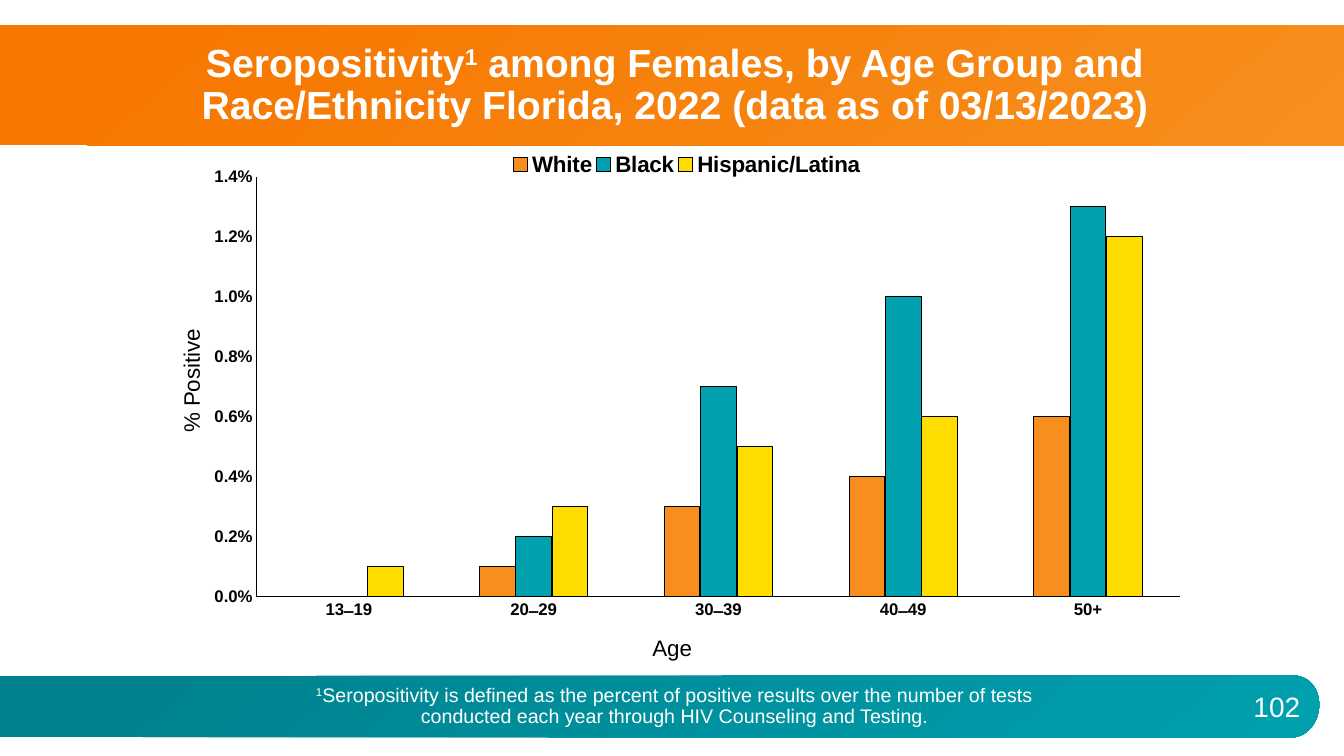
from dataclasses import dataclass

from pptx import Presentation
from pptx.chart.data import CategoryChartData
from pptx.dml.color import RGBColor
from pptx.enum.chart import XL_CHART_TYPE, XL_LEGEND_POSITION, XL_TICK_MARK
from pptx.enum.shapes import MSO_SHAPE
from pptx.enum.text import MSO_ANCHOR, MSO_AUTO_SIZE, PP_ALIGN
from pptx.oxml import parse_xml
from pptx.oxml.ns import nsdecls, qn
from pptx.util import Cm, Pt


@dataclass(frozen=True)
class Theme:
    font: str = "Arial"
    white: str = "FFFFFF"
    black: str = "000000"
    orange: tuple = ("F77600", "F78F1C")
    teal: tuple = ("00828E", "00A0AF")
    series: tuple = ("F78E1E", "00A0AF", "FFDD00")
    title: int = 28
    number: int = 20
    label: int = 16
    note: int = 14
    tick: int = 12


theme = Theme()


def style_font(font, size, color, bold=False):
    for name, value in {"name": theme.font, "size": Pt(size), "bold": bold}.items():
        setattr(font, name, value)
    font.color.rgb = RGBColor.from_string(color)


def place_in_chart(element, index, **fractions):
    for layout in element.findall(qn("c:layout")):
        element.remove(layout)
    target = '<c:layoutTarget val="inner"/>' if index == 0 else ""
    modes = "".join(f'<c:{key}Mode val="edge"/>' for key in "xy")
    values = "".join(f'<c:{key} val="{value}"/>' for key, value in fractions.items())
    element.insert(index, parse_xml(
        f'<c:layout {nsdecls("c")}><c:manualLayout>{target}{modes}{values}'
        "</c:manualLayout></c:layout>"))


presentation = Presentation()
presentation.slide_width = Cm(33.87)
presentation.slide_height = Cm(19.05)
slide = presentation.slides.add_slide(presentation.slide_layouts[5])

curve = [(32.51, 17.02), (33.53, 16.97), (33.45, 18.57), (32.51, 18.59)]
steps = 32
footer_points = []
for step in range(steps + 1):
    t = step / steps
    weights = [(1 - t) ** 3, 3 * t * (1 - t) ** 2, 3 * t ** 2 * (1 - t), t ** 3]
    x, y = (sum(w * point[axis] for w, point in zip(weights, curve)) for axis in (0, 1))
    footer_points.append((Cm(x), Cm(y)))
footer_points += [(Cm(0), Cm(18.57)), (Cm(0), Cm(17.04))]
builder = slide.shapes.build_freeform(*footer_points[0])
builder.add_line_segments(footer_points[1:], close=True)
footer_band = builder.convert_to_shape()
title_band = slide.shapes.add_shape(MSO_SHAPE.RECTANGLE, 0, Cm(0.64), Cm(33.87), Cm(3.02))

for band, colors in ((footer_band, theme.teal), (title_band, theme.orange)):
    band.shadow.inherit = False
    band.line.fill.background()
    band.fill.gradient()
    band.fill.gradient_angle = 310
    for stop, color, position in zip(band.fill.gradient_stops, colors, (0.09, 1)):
        stop.color.rgb = RGBColor.from_string(color)
        stop.position = position

title = slide.shapes.title
title.element.getparent().append(title.element)
for name, value in {"left": Cm(1.88), "top": Cm(0.66),
                    "width": Cm(30.25), "height": Cm(3)}.items():
    setattr(title, name, value)

chart_data = CategoryChartData(number_format="0.0%")
chart_data.categories = ["13 ̶ 19", "20 ̶ 29", "30 ̶ 39", "40 ̶ 49", "50+"]
chart_data.add_series("White", (0, 0.001, 0.003, 0.004, 0.006))
chart_data.add_series("Black", (0, 0.002, 0.007, 0.01, 0.013))
chart_data.add_series("Hispanic/Latina", (0.001, 0.003, 0.005, 0.006, 0.012))
chart = slide.shapes.add_chart(XL_CHART_TYPE.COLUMN_CLUSTERED, Cm(4.11), Cm(1.75),
                               Cm(25.65), Cm(14.12), chart_data).chart
chart.has_title = False
style_font(chart.font, 10, theme.black)
chart.element.find(qn("c:chart")).addnext(parse_xml(
    f'<c:spPr {nsdecls("c", "a")}><a:noFill/><a:ln><a:noFill/></a:ln></c:spPr>'))

plot = chart.plots[0]
for name, value in {"gap_width": 215, "overlap": -2, "vary_by_categories": False}.items():
    setattr(plot, name, value)
for series, color in zip(plot.series, theme.series):
    series.invert_if_negative = False
    series.format.fill.solid()
    series.format.fill.fore_color.rgb = RGBColor.from_string(color)

for axis in (chart.category_axis, chart.value_axis):
    for name, value in {"has_major_gridlines": False, "major_tick_mark": XL_TICK_MARK.NONE,
                        "minor_tick_mark": XL_TICK_MARK.NONE}.items():
        setattr(axis, name, value)
    style_font(axis.tick_labels.font, theme.tick, theme.black, True)
for outlined in (*plot.series, chart.category_axis, chart.value_axis):
    outlined.format.line.color.rgb = RGBColor.from_string(theme.black)
    outlined.format.line.width = Pt(0.75)

value_axis = chart.value_axis
for name, value in {"minimum_scale": 0, "maximum_scale": 0.014, "major_unit": 0.002}.items():
    setattr(value_axis, name, value)
value_axis.tick_labels.number_format = "0.0%"
value_axis.tick_labels.number_format_is_linked = False
axis_title = value_axis.axis_title.text_frame
axis_title.text = "% Positive"
style_font(axis_title.paragraphs[0].runs[0].font, theme.label, theme.black)

chart.has_legend = True
chart.legend.position = XL_LEGEND_POSITION.BOTTOM
chart.legend.include_in_layout = False
style_font(chart.legend.font, theme.label, theme.black, True)

place_in_chart(chart.element.xpath(".//c:plotArea")[0], 0, x=0.092, y=0.192, w=0.908, h=0.749)
place_in_chart(chart.element.xpath(".//c:legend")[0], 1, x=0.34, y=0.14, w=0.35, h=0.06)
place_in_chart(chart.element.xpath(".//c:valAx/c:title")[0], 1, x=0.01, y=0.457)

age_label = slide.shapes.add_textbox(Cm(14.91), Cm(15.85), Cm(4.06), Cm(0.94))
footnote = slide.shapes.add_textbox(Cm(1.88), Cm(17.15), Cm(30.25), Cm(1.32))
slide_number = slide.shapes.add_textbox(Cm(30.86), Cm(17.2), Cm(2.16), Cm(1.22))

texts = [
    (title, [["Seropositivity", "1", " among Females, by Age Group and Race/Ethnicity "
              "Florida, 2022 (data as of 03/13/2023)"]],
     theme.title, theme.white, True, PP_ALIGN.CENTER, MSO_ANCHOR.MIDDLE, 0.9),
    (age_label, [["Age"]],
     theme.label, theme.black, False, PP_ALIGN.CENTER, MSO_ANCHOR.TOP, 1),
    (footnote, [["1", "Seropositivity is defined as the percent of positive results "
                 "over the number of tests"],
                ["conducted each year through HIV Counseling and Testing."]],
     theme.note, theme.white, False, PP_ALIGN.CENTER, MSO_ANCHOR.TOP, 0.9),
    (slide_number, [["102"]],
     theme.number, theme.white, False, PP_ALIGN.RIGHT, MSO_ANCHOR.MIDDLE, 1),
]
for shape, lines, size, color, bold, alignment, anchor, spacing in texts:
    frame = shape.text_frame
    for name, value in {"word_wrap": True, "auto_size": MSO_AUTO_SIZE.NONE,
                        "vertical_anchor": anchor}.items():
        setattr(frame, name, value)
    for index, pieces in enumerate(lines):
        paragraph = frame.add_paragraph() if index else frame.paragraphs[0]
        for name, value in {"alignment": alignment, "line_spacing": spacing,
                            "space_before": Pt(0)}.items():
            setattr(paragraph, name, value)
        for piece in pieces:
            run = paragraph.add_run()
            run.text = piece
            style_font(run.font, size, color, bold)
    for properties in shape.element.xpath('.//a:r[a:t="1"]/a:rPr'):
        properties.set("baseline", "30000")

for properties in footnote.element.xpath(".//a:pPr"):
    properties.set("marL", str(Cm(0.64)))
    properties.set("indent", str(-Cm(0.64)))

presentation.save("out.pptx")
